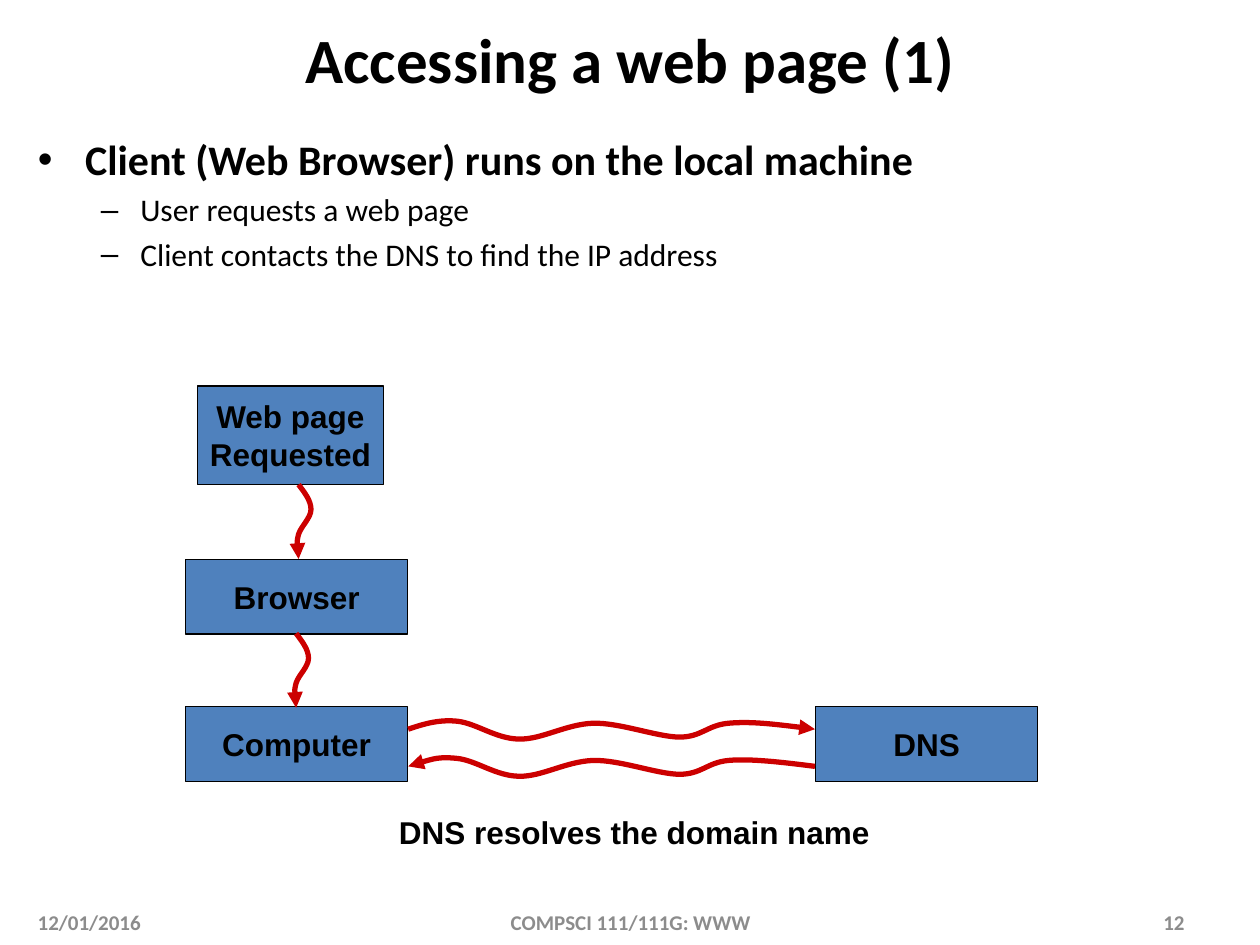
"""Builds the slide that shows how a browser request reaches the DNS."""
from dataclasses import dataclass

from lxml import etree
from pptx import Presentation
from pptx import util as u
from pptx.dml.color import RGBColor
from pptx.enum import text
from pptx.enum import shapes
from pptx.oxml.ns import qn

Cm = u.Cm


@dataclass(frozen=True)
class Theme:
    ink: str = "000000"
    box: str = "4F81BD"
    arrow: str = "CC0000"
    muted: str = "8C8C8C"
    title: int = 36
    lead: int = 24
    label: int = 18
    footer: int = 12
    head_font: str = "Calibri"
    box_font: str = "Arial"


T = Theme()
ALIGN = text.PP_ALIGN
MIDDLE = text.MSO_ANCHOR.MIDDLE

TITLE = "Accessing a web page (1)"
BULLETS = [
    (0, "Client (Web Browser) runs on the local machine"),
    (1, "User requests a web page"),
    (1, "Client contacts the DNS to find the IP address"),
]
BOXES = [
    ("Web page\vRequested", 3.98, 7.78, 3.75, 1.99),
    ("Browser", 3.74, 11.28, 4.48, 1.5),
    ("Computer", 3.74, 14.25, 4.48, 1.5),
    ("DNS", 16.44, 14.25, 4.48, 1.5),
]
FOOTERS = [
    ("12/01/2016", 0.51, 5.92, ALIGN.LEFT),
    ("COMPSCI 111/111G: WWW", 8.69, 8.05, ALIGN.CENTER),
    ("12", 18.21, 5.92, ALIGN.RIGHT),
]
DROP = [(0, 0), (0.13, 0.17), (0.25, 0.33), (0.25, 0.5), (0.25, 0.67),
        (0.05, 0.84), (0, 1), (-0.04, 1.16), (-0.02, 1.33), (0, 1.5)]
WAVE = [(0, 0), (0.3, -0.1), (0.61, -0.2), (0.99, -0.16), (1.37, -0.12),
        (1.78, 0.2), (2.24, 0.2), (2.69, 0.21), (3.18, -0.1), (3.73, -0.12),
        (4.27, -0.13), (5, 0.15), (5.46, 0.16), (5.92, 0.16), (6.02, -0.08),
        (6.46, -0.12), (6.91, -0.16), (7.57, -0.08), (8.2, 0)]
ARROWS = [
    (DROP, 6.02, 9.77, "tailEnd"),
    (DROP, 5.97, 12.77, "tailEnd"),
    (WAVE, 8.23, 14.7, "tailEnd"),
    (WAVE, 8.23, 15.45, "headEnd"),
]


def apply(obj, **values):
    """Set each given value as an attribute of the object."""
    for name, value in values.items():
        setattr(obj, name, value)


def write(p, words, size, font, color=T.ink, bold=True, **layout):
    """Fill a paragraph with words in one format."""
    p.text = words
    apply(p, **layout)
    for r in p.runs:
        apply(r.font, size=u.Pt(size), name=font, bold=bold)
        r.font.color.rgb = RGBColor.from_string(color)


def place(sp, x, y, w, h):
    """Move and size a shape in centimetres."""
    apply(sp, left=Cm(x), top=Cm(y), width=Cm(w), height=Cm(h))


def stroke(sp, color, width):
    """Give a shape a plain outline without a shadow."""
    sp.shadow.inherit = False
    sp.line.color.rgb = RGBColor.from_string(color)
    sp.line.width = u.Pt(width)


def add_title(s):
    """Fill the title placeholder."""
    sp = s.shapes.title
    place(sp, 0.25, 0.3, 24.9, 1.75)
    sp.text_frame.vertical_anchor = MIDDLE
    write(sp.text_frame.paragraphs[0], TITLE, T.title, T.head_font)


def add_bullets(s):
    """Fill the body placeholder with the two-level list."""
    sp = s.placeholders[1]
    place(sp, 0.51, 2.57, 24.38, 15.19)
    tf = sp.text_frame
    for i, (level, words) in enumerate(BULLETS):
        p = tf.add_paragraph() if i else tf.paragraphs[0]
        size = T.label if level else T.lead
        write(p, words, size, T.head_font, bold=not level, level=level)


def add_box(s, words, x, y, w, h):
    """Add a labelled rectangle."""
    sp = s.shapes.add_shape(shapes.MSO_SHAPE.RECTANGLE, Cm(x), Cm(y), Cm(w), Cm(h))
    stroke(sp, T.ink, 0.75)
    sp.fill.solid()
    sp.fill.fore_color.rgb = RGBColor.from_string(T.box)
    apply(sp.text_frame, word_wrap=False, vertical_anchor=MIDDLE)
    write(sp.text_frame.paragraphs[0], words, T.label, T.box_font, alignment=ALIGN.CENTER)


def add_curve(s, points, x, y, end):
    """Add a curved arrow whose points are Bezier knots and handles."""
    spots = [(Cm(x + dx), Cm(y + dy)) for dx, dy in points]
    builder = s.shapes.build_freeform(*spots[0])
    builder.add_line_segments(spots[1:], close=False)
    sp = builder.convert_to_shape()
    sp.fill.background()
    stroke(sp, T.arrow, 3)
    outline = sp._element.find(".//" + qn("a:path"))
    steps = outline.findall(qn("a:lnTo"))
    for i in range(0, len(steps), 3):
        cubic = etree.SubElement(outline, qn("a:cubicBezTo"))
        for step in steps[i:i + 3]:
            cubic.append(step[0])
            outline.remove(step)
    ln = sp._element.find(".//" + qn("a:ln"))
    etree.SubElement(ln, qn("a:" + end), type="triangle")


def add_text(s, words, x, y, w, h, align, wrap=True, **style):
    """Add a text box with one paragraph."""
    tf = s.shapes.add_textbox(Cm(x), Cm(y), Cm(w), Cm(h)).text_frame
    apply(tf, word_wrap=wrap, vertical_anchor=MIDDLE)
    write(tf.paragraphs[0], words, alignment=align, **style)


def main():
    """Build and save the slide."""
    prs = Presentation()
    apply(prs, slide_width=Cm(25.4), slide_height=Cm(19.05))
    s = prs.slides.add_slide(prs.slide_layouts[1])
    add_title(s)
    add_bullets(s)
    for box in BOXES:
        add_box(s, *box)
    for arrow in ARROWS:
        add_curve(s, *arrow)
    add_text(s, "DNS resolves the domain name", 7.75, 16.26, 10.08, 1.02,
             ALIGN.CENTER, wrap=False, size=T.label, font=T.box_font)
    for words, x, w, align in FOOTERS:
        add_text(s, words, x, 18.24, w, 0.69, align,
                 size=T.footer, font=T.head_font, color=T.muted)
    prs.save("out.pptx")


if __name__ == "__main__":
    main()
